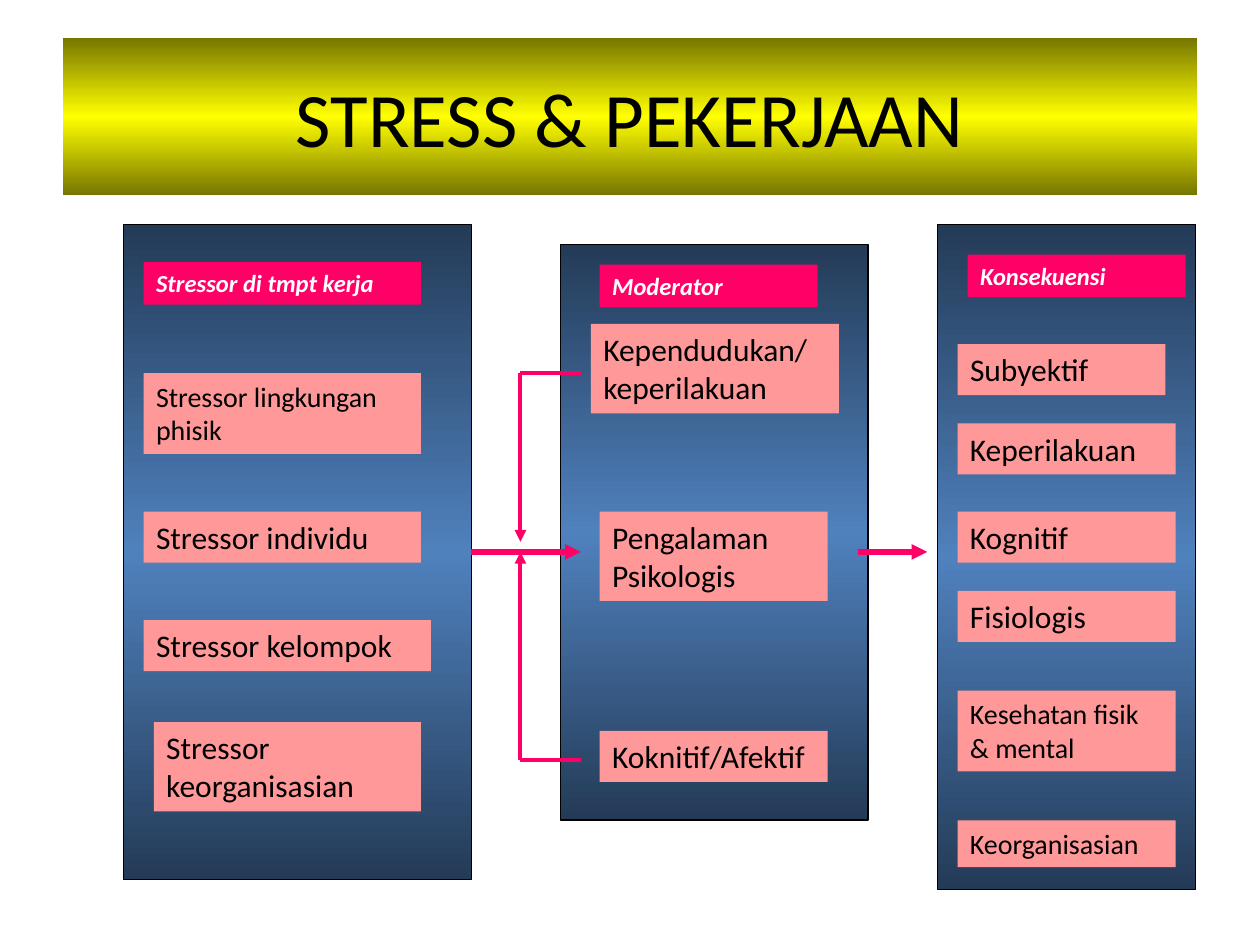
import copy

import pptx
import pptx.dml.color
import pptx.enum.shapes
import pptx.enum.text
import pptx.util
from lxml import etree
from pptx.oxml.ns import qn

Pt = pptx.util.Pt
RGBColor = pptx.dml.color.RGBColor

BLACK = RGBColor(0x00, 0x00, 0x00)
WHITE = RGBColor(0xFF, 0xFF, 0xFF)
YELLOW = RGBColor(0xFF, 0xFF, 0x00)
OLIVE = RGBColor(0x76, 0x76, 0x00)
BLUE = RGBColor(0x4F, 0x81, 0xBD)
NAVY = RGBColor(0x24, 0x3B, 0x57)
SALMON = RGBColor(0xFF, 0x99, 0x99)
MAGENTA = RGBColor(0xFF, 0x00, 0x66)

FONT = "Calibri"
LINE_SPACING = 1.22
INSET = 3.6

# Panel box, then its heading (text, dx, dy, width),
# then its items (text, dx, dy, width, size, lines); dx and dy start at the panel corner.
PANELS = [
    ((70.6, 128.2, 198.7, 374.4),
     ("Stressor di tmpt kerja", 11.5, 21.6, 158.4),
     [("Stressor lingkungan phisik", 11.5, 85, 158.4, 16, 2),
      ("Stressor individu", 11.5, 164.2, 158.4, 18, 1),
      ("Stressor kelompok", 11.5, 226.1, 164.2, 18, 1),
      ("Stressor keorganisasian", 17.3, 284.4, 152.6, 18, 2)]),
    ((320.4, 139.7, 175.7, 329),
     ("Moderator", 22.3, 11.5, 124.6),
     [("Kependudukan/ keperilakuan", 17.3, 45.4, 141.8, 18, 2),
      ("Pengalaman Psikologis", 22.3, 152.6, 130.3, 18, 2),
      ("Koknitif/Afektif", 22.3, 277.9, 130.3, 18, 1)]),
    ((535.7, 128.2, 147.6, 380.2),
     ("Konsekuensi", 17.3, 17.3, 124.6),
     [("Subyektif", 11.5, 68.4, 118.8, 18, 1),
      ("Keperilakuan", 11.5, 113.8, 124.6, 18, 1),
      ("Kognitif", 11.5, 164.2, 124.6, 18, 1),
      ("Fisiologis", 11.5, 209.5, 124.6, 18, 1),
      ("Kesehatan fisik & mental", 11.5, 266.4, 124.6, 16, 2),
      ("Keorganisasian", 11.5, 340.6, 124.6, 16, 1)]),
]


def add_rectangle(slide, box):
    shape = slide.shapes.add_shape(
        pptx.enum.shapes.MSO_SHAPE.RECTANGLE, *(Pt(length) for length in box))
    shape.shadow.inherit = False
    shape.line.fill.background()
    return shape


def fill_with_band(shape, edge, middle):
    """Vertical gradient that is symmetric about the middle colour."""
    shape.fill.gradient()
    shape.fill.gradient_angle = 270
    first, last = shape.fill.gradient_stops
    first.color.rgb = middle
    last.color.rgb = edge
    stops = shape.fill._fill._gradFill.find(qn("a:gsLst"))
    stops[0].set("pos", "50000")
    stops[1].set("pos", "100000")
    top = copy.deepcopy(stops[1])
    top.set("pos", "0")
    stops.insert(0, top)


def write_text(shape, text, size, color, emphasis=False, centred=False):
    frame = shape.text_frame
    frame.word_wrap = True
    anchor = pptx.enum.text.MSO_ANCHOR
    frame.vertical_anchor = anchor.MIDDLE if centred else anchor.TOP
    paragraph = frame.paragraphs[0]
    align = pptx.enum.text.PP_ALIGN
    paragraph.alignment = align.CENTER if centred else align.LEFT
    run = paragraph.add_run()
    run.text = text
    run.font.name = FONT
    run.font.size = Pt(size)
    run.font.color.rgb = color
    run.font.bold = run.font.italic = emphasis


def add_title(slide, box):
    shape = add_rectangle(slide, box)
    fill_with_band(shape, OLIVE, YELLOW)
    write_text(shape, "STRESS & PEKERJAAN", 44, BLACK, centred=True)


def add_label(slide, text, left, top, width, size, lines, fill, color, emphasis=False):
    """Box whose height follows from its lines of text."""
    height = round(lines * size * LINE_SPACING + 2 * INSET, 2)
    shape = add_rectangle(slide, (left, top, width, height))
    shape.fill.solid()
    shape.fill.fore_color.rgb = fill
    write_text(shape, text, size, color, emphasis)


def add_panel(slide, box, heading, items):
    panel = add_rectangle(slide, box)
    fill_with_band(panel, NAVY, BLUE)
    panel.line.color.rgb = BLACK
    panel.line.width = Pt(0.75)
    left, top = box[:2]
    text, dx, dy, width = heading
    add_label(slide, text, left + dx, top + dy, width, 14, 1, MAGENTA, WHITE, True)
    for text, dx, dy, width, size, lines in items:
        add_label(slide, text, left + dx, top + dy, width, size, lines, SALMON, BLACK)


def add_line(slide, start, end, weight, arrow=False):
    connector = slide.shapes.add_connector(
        pptx.enum.shapes.MSO_CONNECTOR.STRAIGHT,
        *(Pt(length) for length in start + end))
    connector.line.color.rgb = MAGENTA
    connector.line.width = Pt(weight)
    if arrow:
        outline = connector.line._get_or_add_ln()
        etree.SubElement(outline, qn("a:tailEnd"), type="triangle")
    etree.SubElement(connector._element.spPr, qn("a:effectLst"))


def add_flow(slide, left, middle):
    """Arrows between the panels, from the edge of the first panel at mid height."""
    branch, inner = left + 28.1, left + 62.6
    add_line(slide, (left, middle), (inner, middle), 3, True)
    for rise, gap in ((-102.3, -5.8), (118.8, 0)):
        add_line(slide, (inner, middle + rise), (branch, middle + rise), 2.25)
        add_line(slide, (branch, middle + rise), (branch, middle + gap), 2.25, True)
    add_line(slide, (left + 221, middle), (left + 260.6, middle), 3, True)


def main():
    presentation = pptx.Presentation()
    presentation.slide_width = Pt(720)
    presentation.slide_height = Pt(540)
    slide = presentation.slides.add_slide(presentation.slide_layouts[6])
    add_title(slide, (36, 21.6, 648, 90))
    for box, heading, items in PANELS:
        add_panel(slide, box, heading, items)
    add_flow(slide, 269.3, 315.4)
    presentation.save("out.pptx")


if __name__ == "__main__":
    main()
